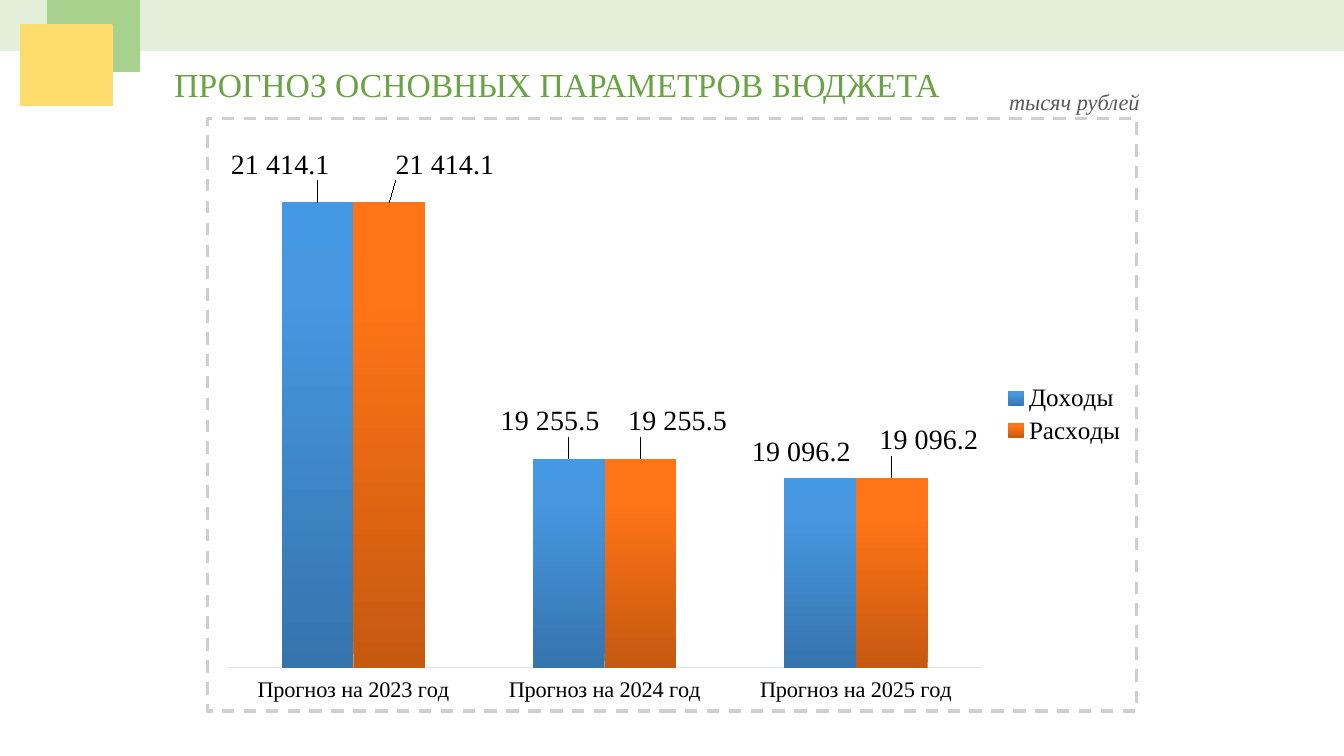
"""Builds the slide with the forecast of the main budget parameters."""
from lxml.etree import SubElement
from pptx import Presentation
from pptx.chart.data import CategoryChartData
from pptx.dml.color import RGBColor
from pptx.enum.chart import XL_CHART_TYPE as ChartType, XL_LABEL_POSITION as LabelPosition
from pptx.enum.chart import XL_LEGEND_POSITION as LegendPosition, XL_TICK_MARK as TickMark
from pptx.enum.chart import XL_TICK_LABEL_POSITION as TickLabels
from pptx.enum.shapes import MSO_SHAPE as Shape
from pptx.enum.text import MSO_ANCHOR as Anchor, MSO_AUTO_SIZE as AutoSize, PP_ALIGN as Align
from pptx.oxml import parse_xml
from pptx.oxml.ns import nsdecls, qn
from pptx.util import Inches, Pt

COLORS = {
    "title": "6AA343", "unit": "595959", "text": "000000", "axis": "E0E5EB", "border": "D0CECE",
    "band": "E2F0D9", "green": "A9D18E", "yellow": "FFDC6D",
}
SERIF = "Times New Roman"
NUMBER_FORMAT = r"#\ ##0.0"
CHART_BOX = (2.04, 1.16, 9.25, 5.91)
YEARS = (2023, 2024, 2025)
TOTALS = (21414.1, 19255.5, 19096.2)
SERIES = {
    "Доходы": {"stops": ((0, "3674AD"), (80, "4697E0"), (100, "4498E4")),
               "shifts": ((-0.04, -0.03), (-0.02, -0.03), (-0.02, -0.01))},
    "Расходы": {"stops": ((0, "C65910"), (80, "FF7416"), (100, "FF7517")),
                "shifts": ((0.06, -0.03), (0.04, -0.03), (0.04, -0.03))},
}


def style_font(font, size, color, name=SERIF):
    font.size, font.name = Pt(size), name
    font.color.rgb = RGBColor.from_string(COLORS[color])


def manual_layout(**shares):
    parts = "".join(f'<c:{key} val="{value}"/>' for key, value in shares.items())
    return parse_xml(f'<c:layout {nsdecls("c")}><c:manualLayout>{parts}</c:manualLayout></c:layout>')


deck = Presentation()
deck.slide_width, deck.slide_height = Inches(13.33), Inches(7.5)
page = deck.slides.add_slide(deck.slide_layouts[5])

title = page.shapes.title
title.left, title.top, title.width, title.height = map(Inches, (1.63, 0.58, 7.87, 0.5))
unit_box = page.shapes.add_textbox(*map(Inches, (9.91, 0.83, 1.52, 0.37)))
for box, text, size, color in (
    (title, "ПРОГНОЗ ОСНОВНЫХ ПАРАМЕТРОВ БЮДЖЕТА", 24, "title"),
    (unit_box, "тысяч рублей", 16, "unit"),
):
    frame = box.text_frame
    frame.word_wrap, frame.auto_size = False, AutoSize.SHAPE_TO_FIT_TEXT
    frame.vertical_anchor = Anchor.TOP
    para = frame.paragraphs[0]
    para.alignment = Align.LEFT
    span = para.add_run()
    span.text = text
    span.font.italic = box is unit_box
    style_font(span.font, size, color)

for color, *bounds in (
    ("band", 0, 0, 13.33, 0.5),
    ("green", 0.47, 0, 0.91, 0.71),
    ("yellow", 0.21, 0.25, 0.9, 0.8),
):
    block = page.shapes.add_shape(Shape.RECTANGLE, *map(Inches, bounds))
    block.shadow.inherit = False
    block.fill.solid()
    block.fill.fore_color.rgb = RGBColor.from_string(COLORS[color])
    block.line.color.rgb = RGBColor.from_string(COLORS[color])
    block.line.width = Pt(1)

data = CategoryChartData(number_format=NUMBER_FORMAT)
data.categories = [f"Прогноз на {year} год" for year in YEARS]
for name in SERIES:
    data.add_series(name, TOTALS)
chart = page.shapes.add_chart(ChartType.COLUMN_CLUSTERED, *map(Inches, CHART_BOX), data).chart
style_font(chart.font, 10, "text", "Calibri")
chart.has_title = False
chart.has_legend = True
chart.legend.position = LegendPosition.RIGHT
chart.legend.include_in_layout = False
style_font(chart.legend.font, 18, "text")

category_axis, value_axis = chart.category_axis, chart.value_axis
category_axis.major_tick_mark = TickMark.NONE
category_axis.tick_label_position = TickLabels.LOW
category_axis.format.line.color.rgb = RGBColor.from_string(COLORS["axis"])
category_axis.format.line.width = Pt(0.75)
style_font(category_axis.tick_labels.font, 16, "text")
value_axis.minimum_scale, value_axis.maximum_scale = 17500, 22000
value_axis.has_major_gridlines = False
value_axis.visible = False

plot = chart.plots[0]
plot.gap_width, plot.overlap, plot.vary_by_categories = 150, 0, False
for series in plot.series:
    look = SERIES[series.name]
    stops = "".join(
        f'<a:gs pos="{share * 1000}"><a:srgbClr val="{color}"/></a:gs>' for share, color in look["stops"]
    )
    series.format.fill.background()
    properties = series._element.find(qn("c:spPr"))
    properties.replace(properties.find(qn("a:noFill")), parse_xml(
        f'<a:gradFill {nsdecls("a")} rotWithShape="1"><a:gsLst>{stops}</a:gsLst>'
        '<a:lin ang="16200000" scaled="0"/></a:gradFill>'
    ))
    labels = series.data_labels
    labels.show_value = True
    labels.number_format, labels.number_format_is_linked = NUMBER_FORMAT, False
    labels.position = LabelPosition.OUTSIDE_END
    style_font(labels.font, 20, "text")
    for index in range(len(YEARS)):
        label = series.points[index].data_label
        label.position = LabelPosition.OUTSIDE_END
        style_font(label.font, 20, "text")
    for item, (x, y) in zip(series._element.iter(qn("c:dLbl")), look["shifts"]):
        item.insert(1, manual_layout(x=x, y=y))
        item.insert(2, parse_xml(
            f'<c:numFmt {nsdecls("c")} formatCode="{NUMBER_FORMAT}" sourceLinked="0"/>'
        ))

plot_area = chart.element.chart.plotArea if hasattr(chart, "element") else chart._chartSpace.chart.plotArea
for old_layout in plot_area.findall(qn("c:layout")):
    plot_area.remove(old_layout)
plot_area.insert(0, manual_layout(
    layoutTarget="inner", xMode="edge", yMode="edge", x=0.022, y=0.024, w=0.811, h=0.903
))

border = parse_xml(f'<c:spPr {nsdecls("c", "a")}><a:noFill/></c:spPr>')
line = SubElement(border, qn("a:ln"), w=str(Pt(2.25)))
SubElement(SubElement(line, qn("a:solidFill")), qn("a:srgbClr"), val=COLORS["border"])
SubElement(line, qn("a:prstDash"), val="dash")
plot_area.getparent().addnext(border)

deck.save("out.pptx")
